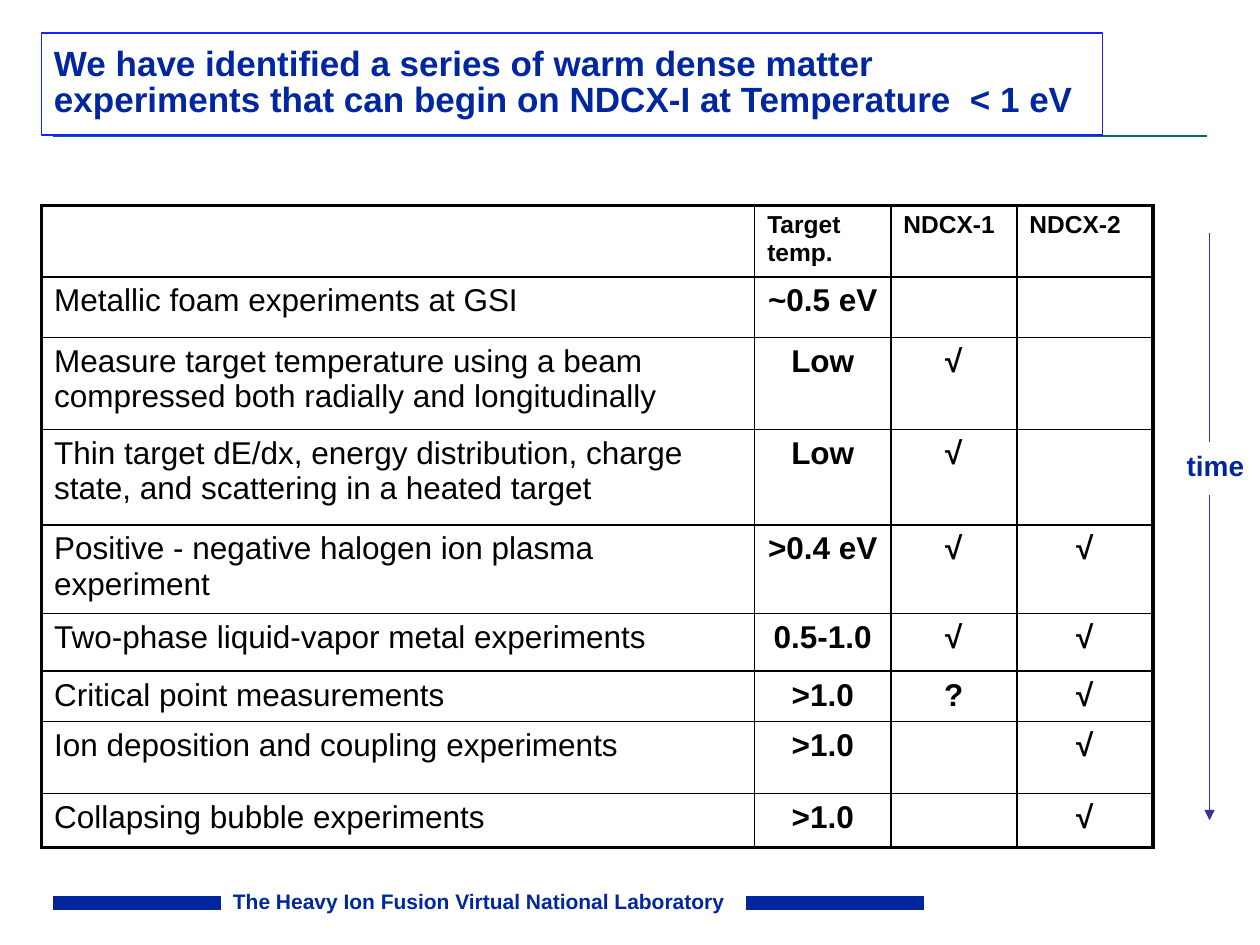
from dataclasses import dataclass, field
from lxml.etree import SubElement
from pptx import Presentation
from pptx.dml.color import RGBColor
from pptx.enum.shapes import MSO_CONNECTOR, MSO_SHAPE
from pptx.enum.text import MSO_ANCHOR, MSO_AUTO_SIZE, PP_ALIGN
from pptx.oxml.ns import qn
from pptx.util import Inches, Pt

COLORS = {
    "navy": "00279F",
    "green": "006B61",
    "frame": "1621FF",
    "arrow": "333399",
    "black": "000000",
}
GRID_COLUMNS, GRID_ROWS = 100, 75
TICK = "√"
HEADINGS = ["", "Target temp.", "NDCX-1", "NDCX-2"]
EXPERIMENTS = [
    ["Metallic foam experiments at GSI", "~0.5 eV", "", ""],
    ["Measure target temperature using a beam compressed both radially and longitudinally", "Low", TICK, ""],
    ["Thin target dE/dx, energy distribution, charge state, and scattering in a heated target", "Low", TICK, ""],
    ["Positive - negative halogen ion plasma experiment", ">0.4 eV", TICK, TICK],
    ["Two-phase liquid-vapor metal experiments", "0.5-1.0", TICK, TICK],
    ["Critical point measurements", ">1.0", "?", TICK],
    ["Ion deposition and coupling experiments", ">1.0", "", TICK],
    ["Collapsing bubble experiments", ">1.0", "", TICK],
]
COLUMN_WIDTHS = [56.6, 10.8, 10, 10.8]
ROW_HEIGHTS = [5.6, 4.8, 7.3, 7.6, 7, 4.6, 4, 5.7, 4.3]


def rgb(color):
    return RGBColor.from_string(COLORS[color])


@dataclass
class SlideBuilder:
    deck: object
    font: str = "Arial"
    page: object = field(init=False)

    def __post_init__(self):
        self.page = self.deck.slides.add_slide(self.deck.slide_layouts[6])

    def across(self, columns):
        return round(self.deck.slide_width * columns / GRID_COLUMNS)

    def down(self, rows):
        return round(self.deck.slide_height * rows / GRID_ROWS)

    def place(self, left, top, width, height):
        return self.across(left), self.down(top), self.across(width), self.down(height)

    def add_text(self, frame, text, size, color="navy", bold=True, **layout):
        para = frame.paragraphs[0]
        for name, value in layout.items():
            setattr(para, name, value)
        span = para.add_run()
        span.text = text
        for name, value in {"name": self.font, "size": Pt(size), "bold": bold}.items():
            setattr(span.font, name, value)
        span.font.color.rgb = rgb(color)

    def label(self, area, text, size, wrap):
        box = self.page.shapes.add_textbox(*self.place(*area))
        box.text_frame.word_wrap = wrap
        box.text_frame.auto_size = MSO_AUTO_SIZE.SHAPE_TO_FIT_TEXT
        self.add_text(box.text_frame, text, size)

    def title(self, area, text):
        box = self.page.shapes.add_shape(MSO_SHAPE.RECTANGLE, *self.place(*area))
        box.shadow.inherit = False
        box.fill.background()
        box.line.color.rgb = rgb("frame")
        box.line.width = Pt(1)
        box.text_frame.word_wrap = True
        box.text_frame.vertical_anchor = MSO_ANCHOR.MIDDLE
        self.add_text(box.text_frame, text, 20, alignment=PP_ALIGN.LEFT, line_spacing=0.85)

    def line(self, start, end, color, width=1, arrow=False):
        (left, top), (right, bottom) = start, end
        connector = self.page.shapes.add_connector(
            MSO_CONNECTOR.STRAIGHT,
            self.across(left), self.down(top), self.across(right), self.down(bottom),
        )
        connector.line.color.rgb = rgb(color)
        connector.line.width = Pt(width)
        properties = connector._element.spPr
        if arrow:
            SubElement(properties.find(qn("a:ln")), qn("a:tailEnd"), type="triangle")
        SubElement(properties, qn("a:effectLst"))

    def borders(self, cell, widths):
        properties = cell._tc.get_or_add_tcPr()
        for side, width in widths.items():
            edge = SubElement(properties, qn(f"a:ln{side}"), w=str(Pt(width)))
            fill = SubElement(edge, qn("a:solidFill"))
            SubElement(fill, qn("a:srgbClr"), val=COLORS["black"])

    def table(self, left, top, widths, heights, content):
        area = self.place(left, top, sum(widths), sum(heights))
        grid = self.page.shapes.add_table(len(heights), len(widths), *area).table
        grid.first_row = grid.horz_banding = False
        for column, width in zip(grid.columns, widths):
            column.width = self.across(width)
        for row, height in zip(grid.rows, heights):
            row.height = self.down(height)
        last_row, last_column = len(heights) - 1, len(widths) - 1
        for row, texts in enumerate(content):
            for column, text in enumerate(texts):
                cell = grid.cell(row, column)
                outer = {"L": column == 0, "R": column == last_column, "T": row == 0, "B": row == last_row}
                self.borders(cell, {side: 2.25 if edge else 1 for side, edge in outer.items()})
                cell.fill.background()
                if text:
                    centred = row > 0 and column > 0
                    self.add_text(
                        cell.text_frame, text, 18 if row else 14, "black", row == 0 or column > 0,
                        alignment=PP_ALIGN.CENTER if centred else PP_ALIGN.LEFT,
                    )


def main():
    deck = Presentation()
    deck.slide_width, deck.slide_height = Inches(10), Inches(7.5)
    slide = SlideBuilder(deck)
    slide.line((4.2, 10.8), (95.8, 10.8), "green")
    for left, right in [(59.2, 73.3), (4.2, 17.5)]:
        slide.line((left, 71.7), (right, 71.7), "navy", 8)
    slide.label((17.5, 70, 41.1, 3), "The Heavy Ion Fusion Virtual National Laboratory", 12, False)
    slide.table(3.3, 16.3, COLUMN_WIDTHS, ROW_HEIGHTS, [HEADINGS, *EXPERIMENTS])
    slide.title(
        (3.3, 2.6, 84.2, 8.1),
        "We have identified a series of warm dense matter experiments "
        "that can begin on NDCX-I at Temperature  < 1 eV",
    )
    slide.label((93.2, 35.1, 6.7, 3.7), "time", 16, True)
    slide.line((96, 39.3), (96, 65.1), "arrow", arrow=True)
    slide.line((96, 35.1), (96, 18.5), "arrow")
    deck.save("out.pptx")


if __name__ == "__main__":
    main()
